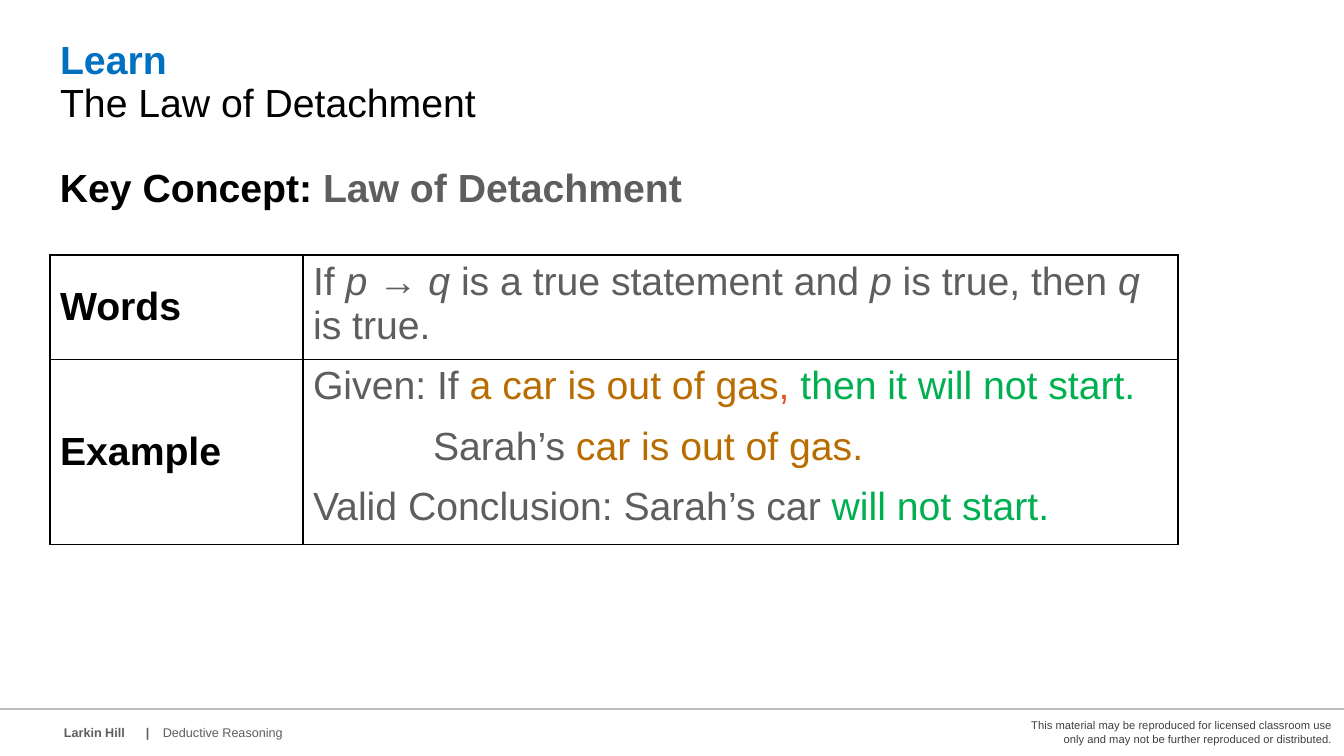
from dataclasses import dataclass
from lxml.etree import SubElement as add_element
from pptx import Presentation
from pptx.dml.color import RGBColor
from pptx.enum.shapes import MSO_CONNECTOR as Connector
from pptx.enum.text import MSO_ANCHOR as Anchor, MSO_AUTO_SIZE as AutoSize, PP_ALIGN as Align
from pptx.oxml.ns import qn
from pptx.util import Pt

EMU_PER_PX = 914400 / 100.8


def px(count):
    return round(count * EMU_PER_PX)


@dataclass(frozen=True)
class Theme:
    font: str = "Arial"
    black: str = "000000"
    white: str = "FFFFFF"
    gray: str = "5E5E5E"
    legal: str = "404040"
    rule: str = "BFBFBF"
    blue: str = "0070C0"
    amber: str = "B96D00"
    red: str = "DF5327"
    green: str = "00B050"
    body_size: int = 28
    footer_size: int = 9
    legal_size: int = 8


@dataclass(frozen=True)
class Span:
    text: str
    color: str = Theme.gray
    bold: bool = False
    italic: bool = False


@dataclass(frozen=True)
class Para:
    spans: tuple
    align: Align = Align.LEFT
    before: int = 0
    spacing: float = 1.0
    indent: int = 0
    tab: int = 0


def line(*spans, **layout):
    return Para(spans, **layout)


class SlideBuilder:
    def __init__(self, page, theme):
        self.page = page
        self.theme = theme

    def set_paras(self, frame, paras, size):
        for index, para in enumerate(paras):
            paragraph = frame.paragraphs[0] if index == 0 else frame.add_paragraph()
            properties = paragraph._p.get_or_add_pPr()
            if para.indent:
                properties.set("marL", str(px(para.indent)))
                properties.set("indent", "0")
            if para.tab:
                tabs = add_element(properties, qn("a:tabLst"))
                add_element(tabs, qn("a:tab"), pos=str(px(para.tab)), algn="l")
            paragraph.alignment = para.align
            paragraph.space_before = Pt(para.before)
            paragraph.line_spacing = para.spacing
            for span in para.spans:
                run = paragraph.add_run()
                run.text = span.text
                run.font.name = self.theme.font
                run.font.size = Pt(size)
                run.font.bold = span.bold
                run.font.italic = span.italic
                run.font.color.rgb = RGBColor.from_string(span.color)

    def title(self, left, top, width, height, paras):
        title = self.page.shapes.title
        title.left, title.top, title.width, title.height = map(px, (left, top, width, height))
        title.text_frame.vertical_anchor = Anchor.TOP
        title.text_frame.auto_size = AutoSize.NONE
        self.set_paras(title.text_frame, paras, self.theme.body_size)

    def text(self, left, top, width, height, para, size, anchor=Anchor.TOP):
        box = self.page.shapes.add_textbox(*map(px, (left, top, width, height)))
        box.text_frame.word_wrap = True
        box.text_frame.vertical_anchor = anchor
        self.set_paras(box.text_frame, [para], size)

    def rule(self, top, width):
        rule = self.page.shapes.add_connector(Connector.STRAIGHT, 0, px(top), px(width), px(top))
        rule.line.color.rgb = RGBColor.from_string(self.theme.rule)
        rule.line.width = Pt(1.75)
        add_element(rule._element.spPr, qn("a:effectLst"))

    def border(self, cell):
        properties = cell._tc.get_or_add_tcPr()
        for side in ("a:lnL", "a:lnR", "a:lnT", "a:lnB"):
            edge = add_element(properties, qn(side), w=str(Pt(1)))
            fill = add_element(edge, qn("a:solidFill"))
            add_element(fill, qn("a:srgbClr"), val=self.theme.black)

    def table(self, left, top, widths, heights, rows):
        area = map(px, (left, top, sum(widths), sum(heights)))
        table = self.page.shapes.add_table(len(rows), len(widths), *area).table
        table.first_row = table.horz_banding = False
        for column, width in zip(table.columns, widths):
            column.width = px(width)
        for row, height, (label, paras) in zip(table.rows, heights, rows):
            row.height = px(height)
            heading, content = row.cells
            heading.vertical_anchor = Anchor.MIDDLE
            self.set_paras(heading.text_frame, [line(Span(label, self.theme.black, bold=True))],
                           self.theme.body_size)
            self.set_paras(content.text_frame, paras, self.theme.body_size)
            for cell in row.cells:
                self.border(cell)
                cell.fill.solid()
                cell.fill.fore_color.rgb = RGBColor.from_string(self.theme.white)


def main():
    theme = Theme()
    deck = Presentation()
    deck.slide_width, deck.slide_height = px(1344), px(756)
    page = deck.slides.add_slide(deck.slide_layouts[5])
    builder = SlideBuilder(page, theme)

    builder.rule(709, 1344)
    builder.text(54, 720, 114, 36, line(Span("Larkin Hill\t|", bold=True), tab=82),
                 theme.footer_size)
    builder.text(153, 720, 517, 36, line(Span("Deductive Reasoning")), theme.footer_size)
    legal = ("This material may be reproduced for licensed classroom use "
             "only and may not be further reproduced or distributed.")
    builder.text(999, 706, 343, 52, line(Span(legal, theme.legal), align=Align.RIGHT),
                 theme.legal_size, Anchor.MIDDLE)

    builder.title(50, 36, 766, 142, [
        line(Span("Learn", theme.blue, bold=True), spacing=0.9),
        line(Span("The Law of Detachment", theme.black), spacing=0.9),
    ])
    builder.text(50, 158, 733, 105, line(
        Span("Key Concept: ", theme.black, bold=True),
        Span("Law of Detachment", bold=True)), theme.body_size)

    words = [line(
        Span("If "), Span("p ", italic=True), Span("→ "), Span("q ", italic=True),
        Span("is a true statement and "), Span("p ", italic=True),
        Span("is true, then "), Span("q ", italic=True), Span("is true."))]
    example = [
        line(Span("Given: If "), Span("a car is out of gas", theme.amber),
             Span(", ", theme.red), Span("then it will not start.", theme.green)),
        line(Span("Sarah’s "), Span("car is out of gas.", theme.amber), before=12, indent=120),
        line(Span("Valid Conclusion: Sarah’s car "), Span("will not start.", theme.green),
             before=12),
    ]
    builder.table(50, 255, (253, 875), (104, 185), [("Words", words), ("Example", example)])
    deck.save("out.pptx")


if __name__ == "__main__":
    main()
